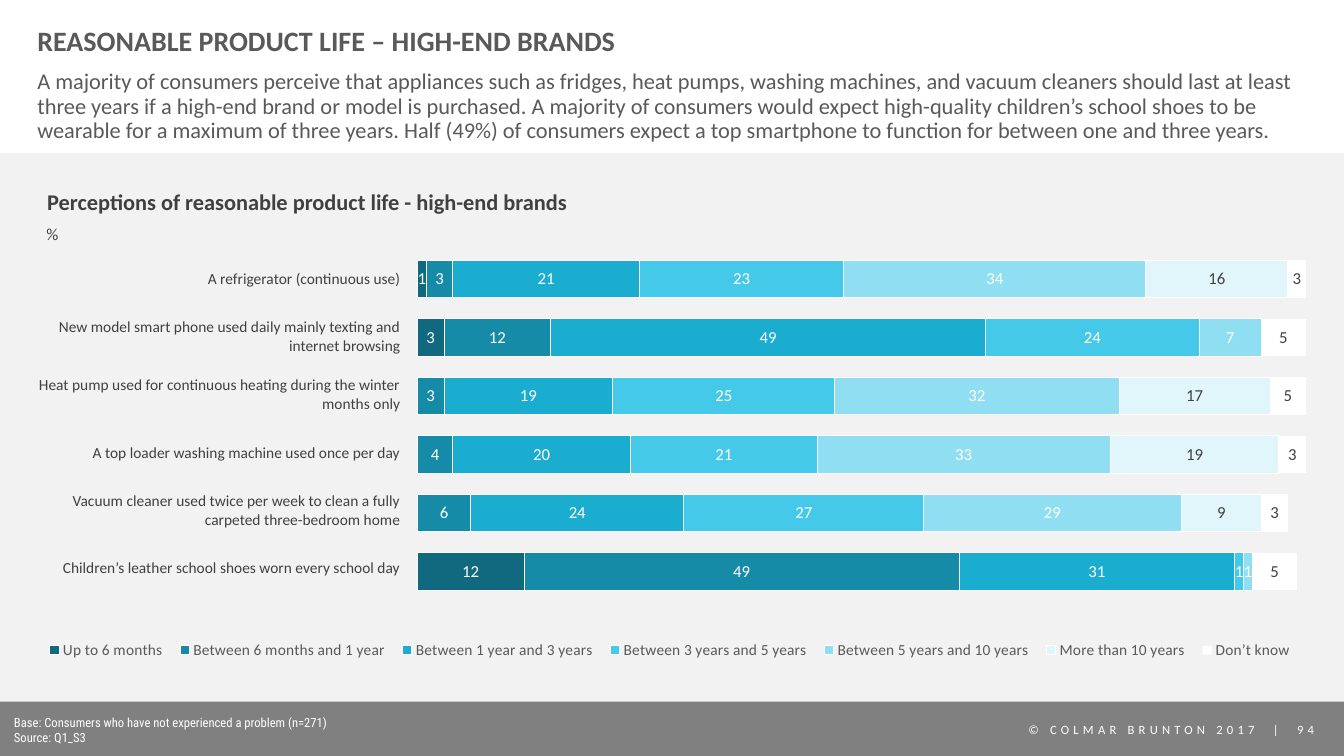
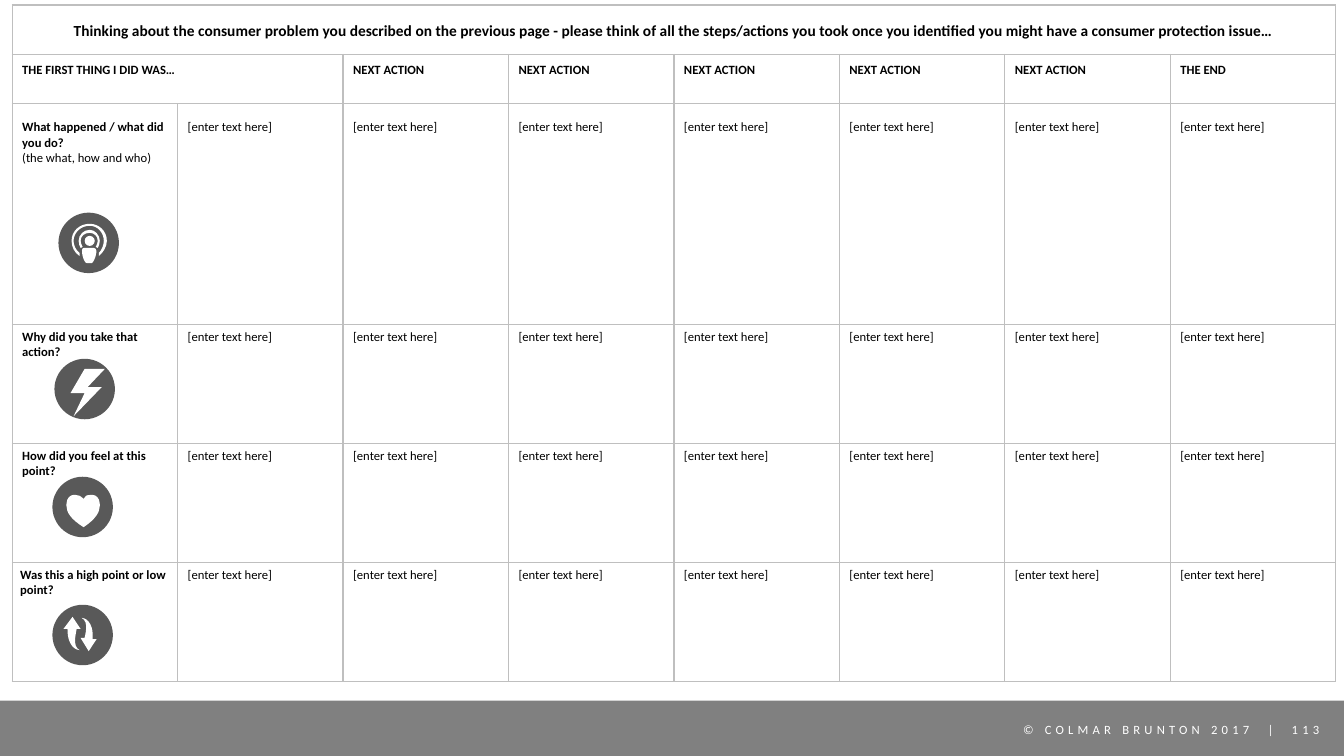
from lxml import etree
from pptx import Presentation
from pptx.chart.data import CategoryChartData
from pptx.dml.color import RGBColor
from pptx.enum import chart as ch, shapes, text
from pptx.oxml import ns, parse_xml
from pptx.util import Inches, Pt

# Shared colours and fonts
WHITE = RGBColor(0xFF, 0xFF, 0xFF)
BLACK = RGBColor(0x00, 0x00, 0x00)
BAND = RGBColor(0x80, 0x80, 0x80)
PANEL = RGBColor(0xF2, 0xF2, 0xF2)
TITLE = RGBColor(0x59, 0x59, 0x59)
BODY = RGBColor(0x40, 0x40, 0x40)
GRID = RGBColor(0xBF, 0xBF, 0xBF)
FONT = "Calibri"
NOTE_FONT = "Roboto Condensed"
LEFT, CENTER, RIGHT = (text.PP_ALIGN.LEFT, text.PP_ALIGN.CENTER,
                       text.PP_ALIGN.RIGHT)


def paint(sp, color):
    sp.shadow.inherit = False
    sp.fill.solid()
    sp.fill.fore_color.rgb = color
    sp.line.fill.background()


def write(p, words, size, color, bold=False, align=LEFT, font=FONT):
    p.alignment = align
    r = p.add_run()
    r.text = words
    r.font.size = Pt(size)
    r.font.name = font
    r.font.bold = bold
    r.font.color.rgb = color
    return r


prs = Presentation()
prs.slide_width, prs.slide_height = Inches(13.33), Inches(7.5)

# Footer band and page number on every slide
for page in (94, 113):
    s = prs.slides.add_slide(prs.slide_layouts[6])
    sp = s.shapes.add_shape(shapes.MSO_SHAPE.RECTANGLE, 0, Inches(6.95),
                            prs.slide_width, Inches(0.55))
    paint(sp, BAND)
    sp = s.shapes.add_textbox(Inches(9.79), Inches(7.11), Inches(3.65), Inches(0.25))
    sp.text_frame.word_wrap = True
    r = write(sp.text_frame.paragraphs[0], f"© COLMAR BRUNTON 2017  |  {page}",
              9, WHITE, align=CENTER)
    r._r.get_or_add_rPr().set("spc", "300")

# ---- Slide 1: product life chart ----
s = prs.slides[0]
sp = s.shapes.add_shape(shapes.MSO_SHAPE.RECTANGLE, 0, Inches(1.52),
                        prs.slide_width, Inches(5.44))
paint(sp, PANEL)

# Title and introduction
SUMMARY = (
    "A majority of consumers perceive that appliances such as fridges, heat pumps, "
    "washing machines, and vacuum cleaners should last at least three years if a "
    "high-end brand or model is purchased. A majority of consumers would expect "
    "high-quality children’s school shoes to be wearable for a maximum of three years. "
    "Half (49%) of consumers expect a top smartphone to function for between one and "
    "three years.")
headings = [
    (0.11, 10.77, 0.62, "REASONABLE PRODUCT LIFE – HIGH-END BRANDS", 20, True,
     text.MSO_ANCHOR.MIDDLE),
    (0.7, 12.68, 0.73, SUMMARY, 16, False, text.MSO_ANCHOR.TOP),
]
for top, width, height, words, size, bold, anchor in headings:
    sp = s.shapes.add_textbox(Inches(0.37), Inches(top), Inches(width), Inches(height))
    tf = sp.text_frame
    tf.word_wrap = True
    tf.vertical_anchor = anchor
    tf.margin_left = tf.margin_right = tf.margin_top = tf.margin_bottom = 0
    tf.paragraphs[0].line_spacing = 0.9
    write(tf.paragraphs[0], words, size, TITLE, bold)

# Stacked bars
CHART_W, CHART_H = 12.9, 4.37
series = [
    ("Up to 6 months", (1, 3, 0, 0, 0, 12), RGBColor(0x10, 0x69, 0x7E), WHITE),
    ("Between 6 months and 1 year", (3, 12, 3, 4, 6, 49),
     RGBColor(0x15, 0x8B, 0xA7), WHITE),
    ("Between 1 year and 3 years", (21, 49, 19, 20, 24, 31),
     RGBColor(0x1A, 0xAD, 0xD0), WHITE),
    ("Between 3 years and 5 years", (23, 24, 25, 21, 27, 1),
     RGBColor(0x44, 0xC9, 0xE8), WHITE),
    ("Between 5 years and 10 years", (34, 7, 32, 33, 29, 1),
     RGBColor(0x8F, 0xDE, 0xF1), WHITE),
    ("More than 10 years", (16, 0, 17, 19, 9, 0), RGBColor(0xE1, 0xF6, 0xFB), BODY),
    ("Don’t know", (3, 5, 5, 3, 3, 5), WHITE, BODY),
]
data = CategoryChartData()
data.categories = [str(n) for n in range(1, 7)]
for name, values, _, _ in series:
    data.add_series(name, values)
chart = s.shapes.add_chart(ch.XL_CHART_TYPE.BAR_STACKED, Inches(0.37), Inches(2.3),
                           Inches(CHART_W), Inches(CHART_H), data).chart
chart.font.name, chart.font.size = FONT, Pt(12)
chart.has_title = False
chart.category_axis.reverse_order = True
chart.category_axis.visible = False
axis = chart.value_axis
axis.minimum_scale, axis.maximum_scale = 0, 100
axis.has_major_gridlines = False
axis.visible = False
plot = chart.plots[0]
plot.gap_width, plot.overlap = 56, 100
plot.vary_by_categories = False
for ser, (name, values, color, label_color) in zip(plot.series, series):
    ser.format.fill.solid()
    ser.format.fill.fore_color.rgb = color
    if name == "Don’t know":
        ser.format.line.fill.background()
    else:
        ser.format.line.color.rgb = WHITE
        ser.format.line.width = Pt(0)
    labels = ser.data_labels
    labels.show_value = True
    labels.number_format, labels.number_format_is_linked = "0;;;", False  # no zeros
    labels.position = ch.XL_LABEL_POSITION.CENTER
    labels.font.name, labels.font.size = FONT, Pt(12)
    labels.font.color.rgb = label_color

# Legend in one row, and fixed places for plot and legend (inches in the chart)
chart.has_legend = True
legend = chart.legend
legend.position = ch.XL_LEGEND_POSITION.BOTTOM
legend.include_in_layout = False
legend.font.name, legend.font.size = FONT, Pt(11)
legend.font.color.rgb = TITLE
plot_area = chart._chartSpace.chart.plotArea
for old in plot_area.findall(ns.qn("c:layout")):
    plot_area.remove(old)
for parent, index, target, box in (
        (plot_area, 0, '<c:layoutTarget val="inner"/>', (3.77, 0.18, 8.81, 3.48)),
        (legend._element, 1, "", (0, 4, 12.55, 0.3))):
    edges = "".join(f'<c:{k}Mode val="edge"/>' for k in "xy")
    sizes = "".join(f'<c:{k} val="{v / full}"/>'
                    for k, v, full in zip("xywh", box, (CHART_W, CHART_H) * 2))
    parent.insert(index, parse_xml(
        f'<c:layout {ns.nsdecls("c")}><c:manualLayout>{target}{edges}{sizes}'
        '</c:manualLayout></c:layout>'))

# Chart heading, unit and source notes
captions = [
    (0.04, 7.04, 11.53, 0.4, True,
     ["Base: Consumers who have not experienced a problem (n=271)", "Source: Q1_S3"],
     9, WHITE, False, LEFT, NOTE_FONT),
    (0.37, 1.82, 5.43, 0.37, False,
     ["Perceptions of reasonable product life - high-end brands"],
     16, BODY, True, LEFT, FONT),
    (0.36, 2.17, 0.32, 0.3, False, ["%"], 12, BODY, False, CENTER, FONT),
]
for left, top, width, height, wrap, lines, size, color, bold, align, font in captions:
    sp = s.shapes.add_textbox(Inches(left), Inches(top), Inches(width), Inches(height))
    tf = sp.text_frame
    tf.word_wrap = wrap
    for i, line in enumerate(lines):
        p = tf.add_paragraph() if i else tf.paragraphs[0]
        write(p, line, size, color, bold, align, font)

# Bar names
products = [
    "A refrigerator (continuous use)",
    "New model smart phone used daily mainly texting and internet browsing",
    "Heat pump used for continuous heating during the winter months only",
    "A top loader washing machine used once per day",
    "Vacuum cleaner used twice per week to clean a fully carpeted three-bedroom home",
    "Children’s leather school shoes worn every school day",
]
NO_GRID_STYLE = "{2D5ABB26-0587-4C30-8999-92F81FD0307C}"
tbl = s.shapes.add_table(len(products), 1, Inches(0.37), Inches(2.48),
                         Inches(3.6), Inches(3.45)).table
tbl.first_row = tbl.horz_banding = False
tbl._tbl.tblPr.find(ns.qn("a:tableStyleId")).text = NO_GRID_STYLE
for i, product in enumerate(products):
    cell = tbl.cell(i, 0)
    cell.fill.background()
    cell.vertical_anchor = text.MSO_ANCHOR.MIDDLE
    cell.margin_left = cell.margin_right = cell.margin_top = cell.margin_bottom = 0
    write(cell.text_frame.paragraphs[0], product, 11, BODY, align=RIGHT)

# ---- Slide 2: action journey table ----
s = prs.slides[1]
QUESTION = (
    "Thinking about the consumer problem you described on the previous page - please "
    "think of all the steps/actions you took once you identified you might have a "
    "consumer protection issue…")
prompts = ["What happened / what did you do?", "Why did you take that action?",
           "How did you feel at this point?", "Was this a high point or low point?"]
rows = [[QUESTION] + [""] * 7,
        ["THE FIRST THING I DID WAS…", ""] + ["NEXT ACTION"] * 5 + ["THE END"]]
rows += [[prompt] + ["[enter text here]"] * 7 for prompt in prompts]
heights = [0.49, 0.49, 2.19, 1.18, 1.18, 1.18]
top_margins = [0.08, 0.08, 0.16, 0.05, 0.05, 0.05]

tbl = s.shapes.add_table(6, 8, Inches(0.12), Inches(0.05),
                         Inches(13.13), Inches(6.71)).table
tbl.first_row = tbl.horz_banding = False
tbl._tbl.tblPr.find(ns.qn("a:tableStyleId")).text = NO_GRID_STYLE
for col in tbl.columns:
    col.width = Inches(13.13 / 8)
for i, row in enumerate(rows):
    tbl.rows[i].height = Inches(heights[i])
    for j, words in enumerate(row):
        cell = tbl.cell(i, j)
        tcPr = cell._tc.get_or_add_tcPr()
        for side in ("a:lnL", "a:lnR", "a:lnT", "a:lnB"):
            ln = etree.SubElement(tcPr, ns.qn(side), w=str(Pt(1)))
            fill = etree.SubElement(ln, ns.qn("a:solidFill"))
            etree.SubElement(fill, ns.qn("a:srgbClr"), val=str(GRID))
        cell.fill.solid()
        cell.fill.fore_color.rgb = WHITE
        cell.margin_left = cell.margin_right = Inches(0.08 if (i, j) == (5, 0) else 0.1)
        cell.margin_top, cell.margin_bottom = Inches(top_margins[i]), Inches(0.05)
        if words:
            write(cell.text_frame.paragraphs[0], words, 9 if i else 11, BLACK,
                  bold=i < 2 or j == 0, align=LEFT if i else CENTER)
tbl.cell(0, 0).vertical_anchor = text.MSO_ANCHOR.MIDDLE
write(tbl.cell(2, 0).text_frame.add_paragraph(), "(the what, how and who)", 9, BLACK)
tbl.cell(0, 0).merge(tbl.cell(0, 7))
tbl.cell(1, 0).merge(tbl.cell(1, 1))

# Icon outlines: two numbers are a corner, six are a Bezier curve
stem = [(0.93, 2.46), (0.91, 2.46, 0.86, 2.46, 0.83, 2.46),
        (0.79, 2.46, 0.83, 2.61, 0.86, 2.61), (0.89, 2.61, 0.86, 2.61, 0.91, 2.61),
        (0.93, 2.61, 0.99, 2.46, 0.93, 2.46)]
outer_ring = [
    (1.06, 2.39), (1.06, 2.29, 0.98, 2.22, 0.89, 2.22),
    (0.79, 2.22, 0.71, 2.29, 0.71, 2.39), (0.71, 2.45, 0.74, 2.51, 0.79, 2.54),
    (0.79, 2.52, 0.79, 2.51, 0.79, 2.51), (0.75, 2.48, 0.73, 2.43, 0.73, 2.39),
    (0.73, 2.31, 0.8, 2.24, 0.89, 2.24), (0.97, 2.24, 1.03, 2.31, 1.03, 2.39),
    (1.03, 2.43, 1.01, 2.48, 0.98, 2.51), (0.98, 2.51, 0.98, 2.52, 0.98, 2.54),
    (1.02, 2.51, 1.06, 2.45, 1.06, 2.39)]
inner_ring = [
    (0.89, 2.28), (0.83, 2.28, 0.78, 2.33, 0.78, 2.39),
    (0.78, 2.42, 0.79, 2.44, 0.8, 2.46), (0.81, 2.45, 0.81, 2.45, 0.82, 2.45),
    (0.81, 2.43, 0.8, 2.41, 0.8, 2.39), (0.8, 2.34, 0.84, 2.31, 0.89, 2.31),
    (0.93, 2.31, 0.97, 2.34, 0.97, 2.39), (0.97, 2.41, 0.96, 2.43, 0.95, 2.45),
    (0.96, 2.45, 0.96, 2.45, 0.97, 2.46), (0.98, 2.44, 0.99, 2.42, 0.99, 2.39),
    (0.99, 2.33, 0.94, 2.28, 0.89, 2.28)]
bolt = [(0.84, 3.66), (1.04, 3.66), (0.87, 3.84), (1.01, 3.84), (0.73, 4.13),
        (0.84, 3.9), (0.7, 3.9)]
heart = [(0.9, 4.91), (0.91, 4.91, 0.91, 4.91, 0.92, 4.91),
         (0.95, 4.91, 0.99, 4.94, 0.99, 5), (0.99, 5.02),
         (0.99, 5.08, 0.95, 5.15, 0.83, 5.23), (0.7, 5.15, 0.66, 5.08, 0.66, 5.02),
         (0.66, 5), (0.66, 4.94, 0.7, 4.91, 0.73, 4.91), (0.75, 4.91),
         (0.78, 4.91, 0.8, 4.92, 0.83, 4.95), (0.84, 4.92, 0.86, 4.91, 0.9, 4.91)]
arrow_up = [(0.72, 6.12), (0.63, 6.24), (0.67, 6.24),
            (0.67, 6.43, 0.77, 6.45, 0.79, 6.45), (0.71, 6.41, 0.76, 6.27, 0.76, 6.24),
            (0.8, 6.24)]
arrow_down = [(0.84, 6.33), (0.8, 6.33), (0.88, 6.46), (0.96, 6.34), (0.92, 6.34),
              (0.93, 6.15, 0.83, 6.13, 0.81, 6.13), (0.89, 6.17, 0.84, 6.31, 0.84, 6.33)]

# Round icons
icons = [(0.58, 2.11, [stem, outer_ring, inner_ring]), (0.54, 3.56, [bolt]),
         (0.52, 4.73, [heart]), (0.52, 6, [arrow_up, arrow_down])]
for left, top, outlines in icons:
    icon = s.shapes.add_group_shape()
    ovals = [(left, top, 0.6, TITLE)]
    if stem in outlines:
        ovals.append((0.84, 2.34, 0.1, WHITE))
    for x, y, size, color in ovals:
        paint(icon.shapes.add_shape(shapes.MSO_SHAPE.OVAL, Inches(x), Inches(y),
                                    Inches(size), Inches(size)), color)
    for outline in outlines:
        points = [(Inches(x), Inches(y)) for step in outline
                  for x, y in zip(step[::2], step[1::2])]
        pen = icon.shapes.build_freeform(*points[0])
        pen.add_line_segments(points[1:], close=True)
        sp = pen.convert_to_shape()
        paint(sp, WHITE)
        # Turn each run of three corners that belongs to a curve into one Bezier
        lines = iter(list(sp._element.iter(ns.qn("a:lnTo"))))
        for step in outline[1:]:
            curve = next(lines)
            if len(step) == 6:
                curve.tag = ns.qn("a:cubicBezTo")
                for extra in (next(lines), next(lines)):
                    curve.append(extra[0])
                    extra.getparent().remove(extra)

prs.save("out.pptx")
